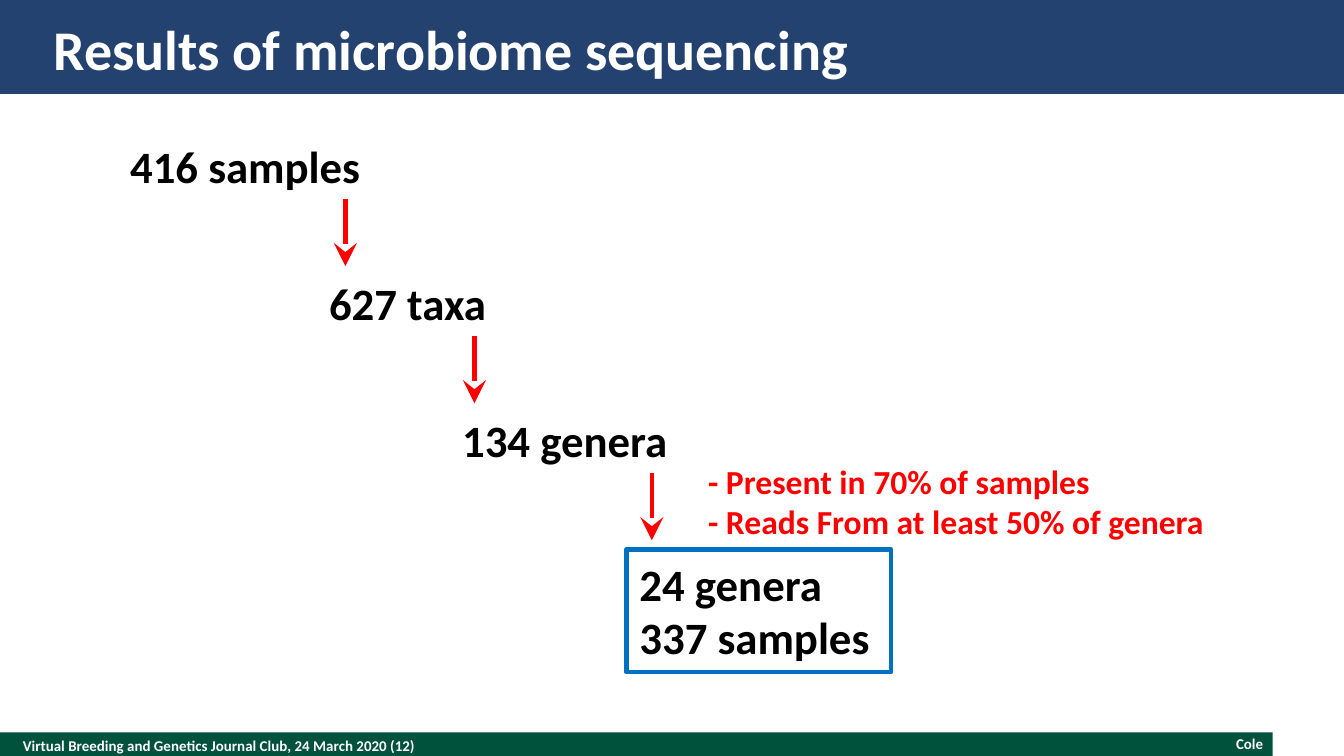
import pptx
import pptx.dml.color
import pptx.enum.shapes
import pptx.enum.text
import pptx.oxml.ns
import pptx.util
from dataclasses import dataclass
from lxml import etree

Inches = pptx.util.Inches
Pt = pptx.util.Pt
ALIGN = pptx.enum.text.PP_ALIGN
ANCHOR = pptx.enum.text.MSO_ANCHOR


@dataclass(frozen=True)
class Theme:
    font: str = "Calibri"
    navy: str = "244270"
    green: str = "00523C"
    white: str = "FFFFFF"
    black: str = "000000"
    red: str = "FF0000"
    blue: str = "0070C0"
    title: int = 30
    step: int = 24
    note: int = 18
    footer: int = 8
    line: float = 2.5


THEME = Theme()


def rgb(color):
    return pptx.dml.color.RGBColor.from_string(color)


def place(shape, box):
    shape.left, shape.top, shape.width, shape.height = map(Inches, box)


def write(shape, text, size, color=THEME.black, align=ALIGN.LEFT,
          anchor=ANCHOR.TOP, inset=True):
    """Fill a shape with one bold paragraph; a newline is a line break."""
    tf = shape.text_frame
    tf.word_wrap = True
    tf.auto_size = pptx.enum.text.MSO_AUTO_SIZE.NONE
    tf.vertical_anchor = anchor
    if not inset:
        tf.margin_left = tf.margin_right = tf.margin_top = tf.margin_bottom = 0
    p = tf.paragraphs[0]
    p.text = text
    p.alignment = align
    for r in p.runs:
        r.font.name = THEME.font
        r.font.size = Pt(size)
        r.font.bold = True
        r.font.color.rgb = rgb(color)


def add_text(slide, box, text, size, **fmt):
    sp = slide.shapes.add_textbox(*map(Inches, box))
    write(sp, text, size, **fmt)
    return sp


def add_rect(slide, box, fill=None, line=None):
    sp = slide.shapes.add_shape(pptx.enum.shapes.MSO_SHAPE.RECTANGLE,
                                *map(Inches, box))
    sp.shadow.inherit = False
    if fill:
        sp.fill.solid()
        sp.fill.fore_color.rgb = rgb(fill)
    else:
        sp.fill.background()
    if line:
        sp.line.color.rgb = rgb(line)
        sp.line.width = Pt(THEME.line)
    else:
        sp.line.fill.background()
    return sp


def add_down_arrow(slide, x, y, length):
    cxn = slide.shapes.add_connector(
        pptx.enum.shapes.MSO_CONNECTOR.STRAIGHT,
        Inches(x), Inches(y), Inches(x), Inches(y + length))
    cxn.line.color.rgb = rgb(THEME.red)
    cxn.line.width = Pt(THEME.line)
    qn = pptx.oxml.ns.qn
    etree.SubElement(cxn.line._get_or_add_ln(), qn("a:tailEnd"),
                     type="stealth", w="lg", len="lg")
    etree.SubElement(cxn._element.spPr, qn("a:effectLst"))


def add_header(slide, box, text):
    x, y, w, h = box
    bar = add_rect(slide, box, fill=THEME.navy)
    title = slide.shapes.title
    # The bar goes behind the title placeholder.
    title._element.addprevious(bar._element)
    place(title, (x + 0.4, y + 0.1, w - 0.8, 0.52))
    write(title, text, THEME.title, color=THEME.white,
          anchor=ANCHOR.MIDDLE, inset=False)


def add_footer(slide, box, left_text, right_text):
    x, y, w, h = box
    add_rect(slide, box, fill=THEME.green)
    fmt = dict(color=THEME.white, anchor=ANCHOR.MIDDLE, inset=False)
    add_text(slide, (x + 0.17, y, 6.5, h), left_text, THEME.footer, **fmt)
    add_text(slide, (x + 7.2, y + 0.02, 2.2, 0.13), right_text, THEME.footer,
             align=ALIGN.RIGHT, **fmt)


def add_filter_steps(slide, box):
    """Staircase of counts, each leading down to the next by an arrow."""
    x, y, w, h = box
    label_h, arrow_h, pitch = 0.5, 0.5, 1.02
    steps = [("416 samples", 0, 1.7),
             ("627 taxa", 1.48, 2.66),
             ("134 genera", 2.47, 3.98)]
    for i, (text, label_x, arrow_x) in enumerate(steps):
        top = y + i * pitch
        add_text(slide, (x + label_x, top, 2.96, label_h), text, THEME.step)
        add_down_arrow(slide, x + arrow_x, top + label_h, arrow_h)

    add_text(slide, (x + 4.3, y + 2.4, w - 4.3, 0.71),
             "- Present in 70% of samples\n- Reads From at least 50% of genera",
             THEME.note, color=THEME.red)
    result = add_rect(slide, (x + 3.79, y + h - 0.91, 1.97, 0.91),
                      line=THEME.blue)
    write(result, "24 genera\n337 samples", THEME.step)


def main():
    prs = pptx.Presentation()
    prs.slide_width = Inches(10)
    prs.slide_height = Inches(10 * 9 / 16)
    slide = prs.slides.add_slide(prs.slide_layouts[5])
    add_header(slide, (0, 0, 10, 0.7), "Results of microbiome sequencing")
    add_footer(slide, (0, 5.45, 9.47, 0.2),
               "Virtual Breeding and Genetics Journal Club, 24 March 2020 (12)",
               "Cole")
    add_filter_steps(slide, (0.87, 0.98, 8.65, 4.02))
    prs.save("out.pptx")


if __name__ == "__main__":
    main()
